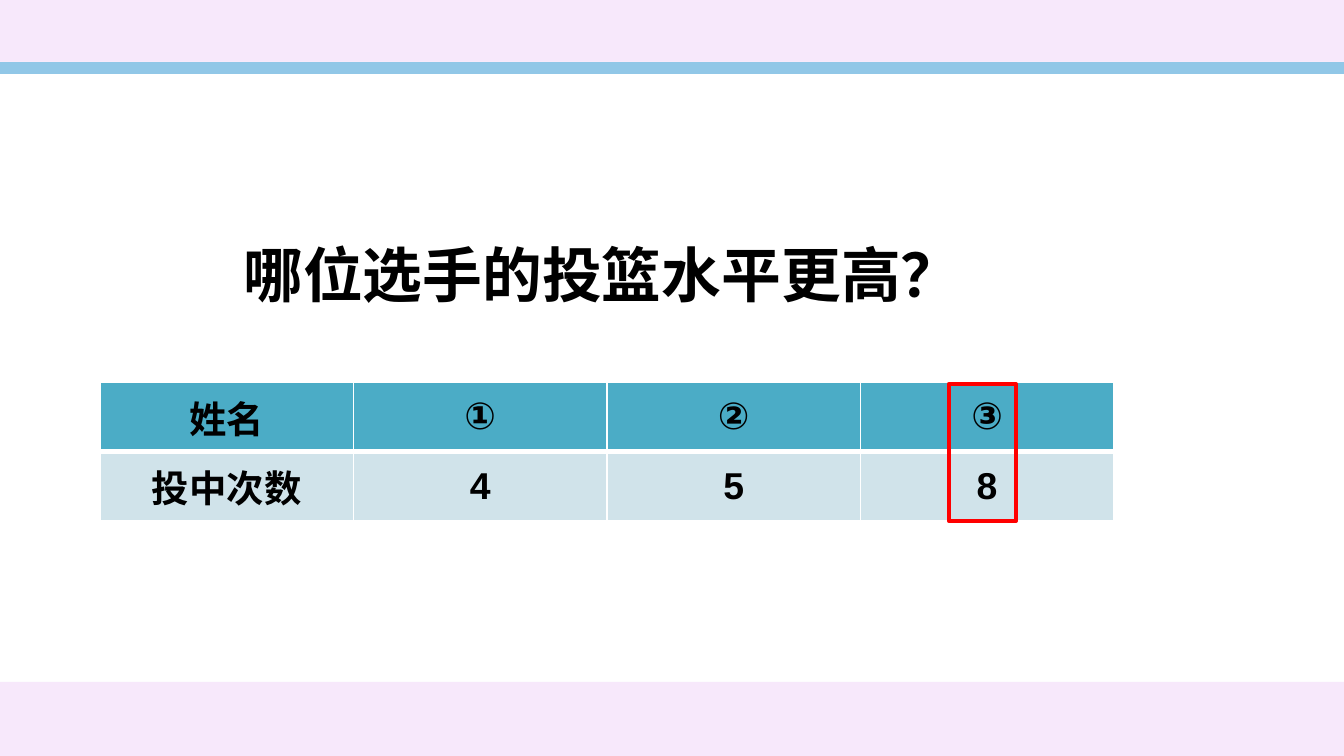
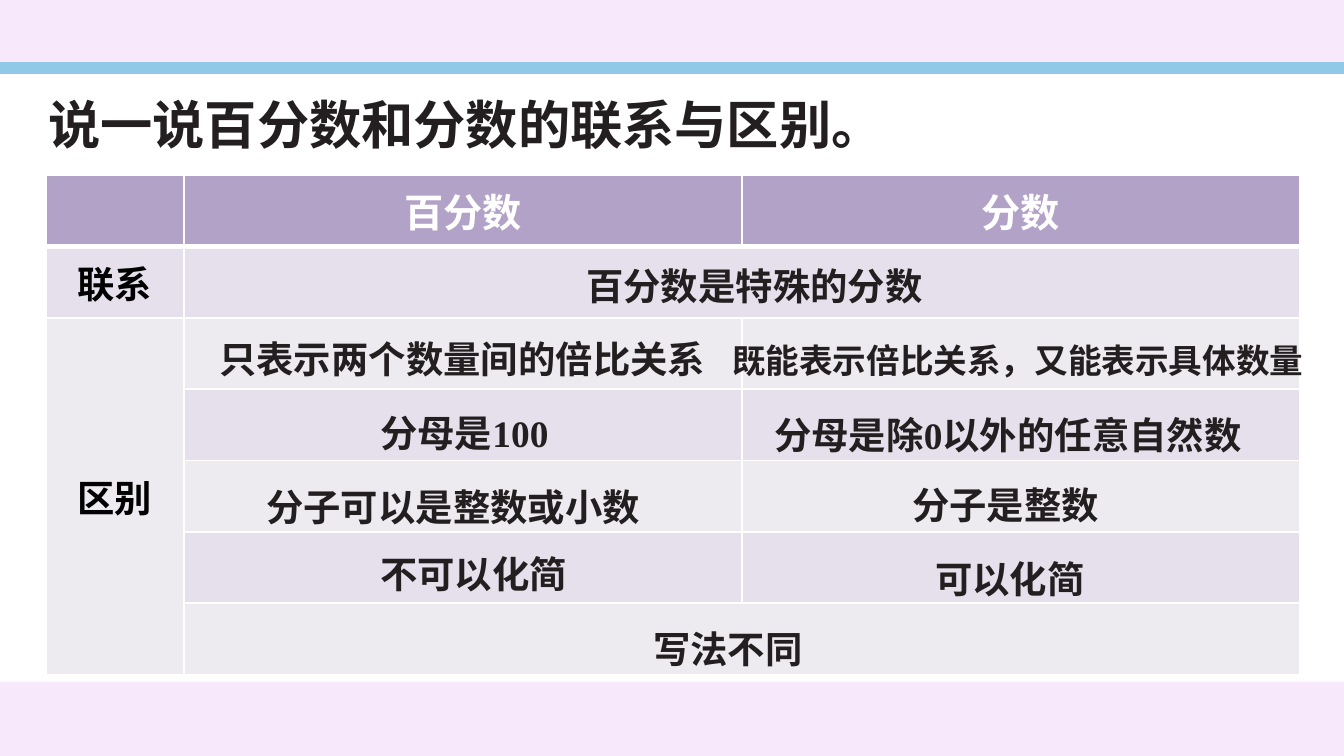
import pptx
import pptx.dml.color
import pptx.enum.shapes
import pptx.enum.text
import pptx.oxml.ns
import pptx.util
from lxml import etree

RGBColor = pptx.dml.color.RGBColor
PP_ALIGN = pptx.enum.text.PP_ALIGN
MSO_ANCHOR = pptx.enum.text.MSO_ANCHOR
qn = pptx.oxml.ns.qn

WIDTH, HEIGHT = 1344, 756
EMU_PER_PX = 914400 / 134.4

PINK = RGBColor(0xF7, 0xE8, 0xFB)
WHITE = RGBColor(0xFF, 0xFF, 0xFF)
SKY = RGBColor(0x91, 0xC7, 0xE7)
BLACK = RGBColor(0, 0, 0)
INK = RGBColor(0x23, 0x1F, 0x20)
RED = RGBColor(0xFF, 0, 0)
TEAL = RGBColor(0x4B, 0xAC, 0xC6)
PALE_TEAL = RGBColor(0xD0, 0xE3, 0xEA)
PURPLE = RGBColor(0xB3, 0xA2, 0xC7)
LILAC = RGBColor(0xE6, 0xE0, 0xEC)
PALE_LILAC = RGBColor(0xED, 0xEA, 0xF0)

SANS = "Arial"
SERIF = "Times New Roman"
CHINESE = "Noto Sans CJK SC"

SCORES = [["姓名", "①", "②", "③"], ["投中次数", "4", "5", "8"]]
COMPARISON = [["", "百分数", "分数"], ["联系", "", ""], ["区别", "", ""]] + [["", "", ""]] * 4
# Text, left, top, width, size in points
ANSWERS = [
    ("百分数是特殊的分数", 573, 243, 406, 20),
    ("只表示两个数量间的倍比关系", 206, 316, 527, 20),
    ("既能表示倍比关系，又能表示具体数量", 719, 321, 612, 18),
    ("分母是100", 367, 390, 316, 20),
    ("分母是除0以外的任意自然数", 761, 392, 527, 20),
    ("分子可以是整数或小数", 253, 464, 441, 20),
    ("分子是整数", 899, 462, 316, 20),
    ("不可以化简", 367, 531, 269, 20),
    ("可以化简", 922, 536, 269, 20),
    ("写法不同", 640, 606, 269, 20),
]


def px(length):
    return pptx.util.Emu(round(length * EMU_PER_PX))


def box(*lengths):
    return [px(length) for length in lengths]


def style_paragraph(paragraph, size, latin, color, align):
    paragraph.alignment = align
    font = paragraph.font
    font.size = pptx.util.Pt(size)
    font.bold = True
    font.name = latin
    font.color.rgb = color
    defaults = paragraph._p.pPr.find(qn("a:defRPr"))
    etree.SubElement(defaults, qn("a:ea")).set("typeface", CHINESE)


def write_line(holder, text, size, latin, color):
    frame = holder.text_frame
    frame.word_wrap = True
    frame.auto_size = pptx.enum.text.MSO_AUTO_SIZE.SHAPE_TO_FIT_TEXT
    frame.vertical_anchor = MSO_ANCHOR.TOP
    line = frame.paragraphs[0]
    line.text = text
    line.line_spacing = 1.3
    style_paragraph(line, size, latin, color, PP_ALIGN.LEFT)


def add_rectangle(slide, bounds, fill=None, line=None):
    rectangle = slide.shapes.add_shape(
        pptx.enum.shapes.MSO_SHAPE.RECTANGLE, *box(*bounds))
    rectangle.shadow.inherit = False
    if fill is None:
        rectangle.fill.background()
    else:
        rectangle.fill.solid()
        rectangle.fill.fore_color.rgb = fill
    if line is None:
        rectangle.line.fill.background()
    else:
        rectangle.line.color.rgb = line
        rectangle.line.width = pptx.util.Pt(2.25)
    return rectangle


def decorate_master(master, slide):
    """Draw the bands on a slide, then move them behind everything on the master."""
    master.background.fill.solid()
    master.background.fill.fore_color.rgb = PINK
    bands = [(62, 632, WHITE), (62, 12, SKY), (682, 12, PINK)]
    for index, (top, height, color) in enumerate(bands):
        band = add_rectangle(slide, (0, top, WIDTH, height), fill=color).element
        band.nvSpPr.cNvPr.set("id", str(100 + index))
        master.element.cSld.spTree.insert(2 + index, band)


def set_title(slide, text, bounds, size, latin, color):
    title = slide.shapes.title
    title.left, title.top, title.width, title.height = box(*bounds)
    write_line(title, text, size, latin, color)


def add_answer(slide, text, left, top, width, size):
    height = 73 if size == 20 else 66
    answer = slide.shapes.add_textbox(*box(left, top, width, height))
    write_line(answer, text, size, SERIF, INK)


def set_borders(cell, top, bottom):
    properties = cell._tc.get_or_add_tcPr()
    for side, points in (("L", 1), ("R", 1), ("T", top), ("B", bottom)):
        border = etree.SubElement(properties, qn(f"a:ln{side}"))
        border.set("w", str(pptx.util.Pt(points)))
        fill = etree.SubElement(border, qn("a:solidFill"))
        etree.SubElement(fill, qn("a:srgbClr")).set("val", str(WHITE))


def add_grid(slide, rows, bounds, fills, header_size, header_color):
    """fills holds the header colour, then the colours that alternate below it."""
    table = slide.shapes.add_table(len(rows), len(rows[0]), *box(*bounds)).table
    table.horz_banding = False
    header_fill, *bands = fills
    for r, row in enumerate(rows):
        is_header = r == 0
        fill = header_fill if is_header else bands[(r - 1) % len(bands)]
        for c, text in enumerate(row):
            cell = table.cell(r, c)
            set_borders(cell, top=3 if r == 1 else 1, bottom=3 if is_header else 1)
            cell.fill.solid()
            cell.fill.fore_color.rgb = fill
            cell.vertical_anchor = MSO_ANCHOR.MIDDLE
            if text:
                cell.text = text
                style_paragraph(cell.text_frame.paragraphs[0],
                                header_size if is_header else 20, SANS,
                                header_color if is_header else BLACK, PP_ALIGN.CENTER)
    return table


def build_scores(slide):
    set_title(slide, "哪位选手的投篮水平更高？", (230, 210, 771, 107), 32, CHINESE, BLACK)
    add_grid(slide, SCORES, (100, 382, 1014, 139), (TEAL, PALE_TEAL), 20, BLACK)
    add_rectangle(slide, (949, 384, 67, 137), line=RED)


def build_comparison(slide):
    set_title(slide, "说一说百分数和分数的联系与区别。", (35, 67, 1102, 95), 28, SERIF, INK)
    table = add_grid(slide, COMPARISON, (46, 175, 1254, 500),
                     (PURPLE, LILAC, PALE_LILAC), 21, WHITE)
    for column, width in zip(table.columns, (138, 558, 558)):
        column.width = px(width)
    for first, last in (((1, 1), (1, 2)), ((2, 0), (6, 0)), ((6, 1), (6, 2))):
        table.cell(*first).merge(table.cell(*last))
    for answer in ANSWERS:
        add_answer(slide, *answer)


def main():
    deck = pptx.Presentation()
    deck.slide_width, deck.slide_height = box(WIDTH, HEIGHT)
    title_only = deck.slide_layouts[5]
    scores, comparison = [deck.slides.add_slide(title_only) for _ in range(2)]
    decorate_master(deck.slide_master, scores)
    build_scores(scores)
    build_comparison(comparison)
    deck.save("out.pptx")


if __name__ == "__main__":
    main()
